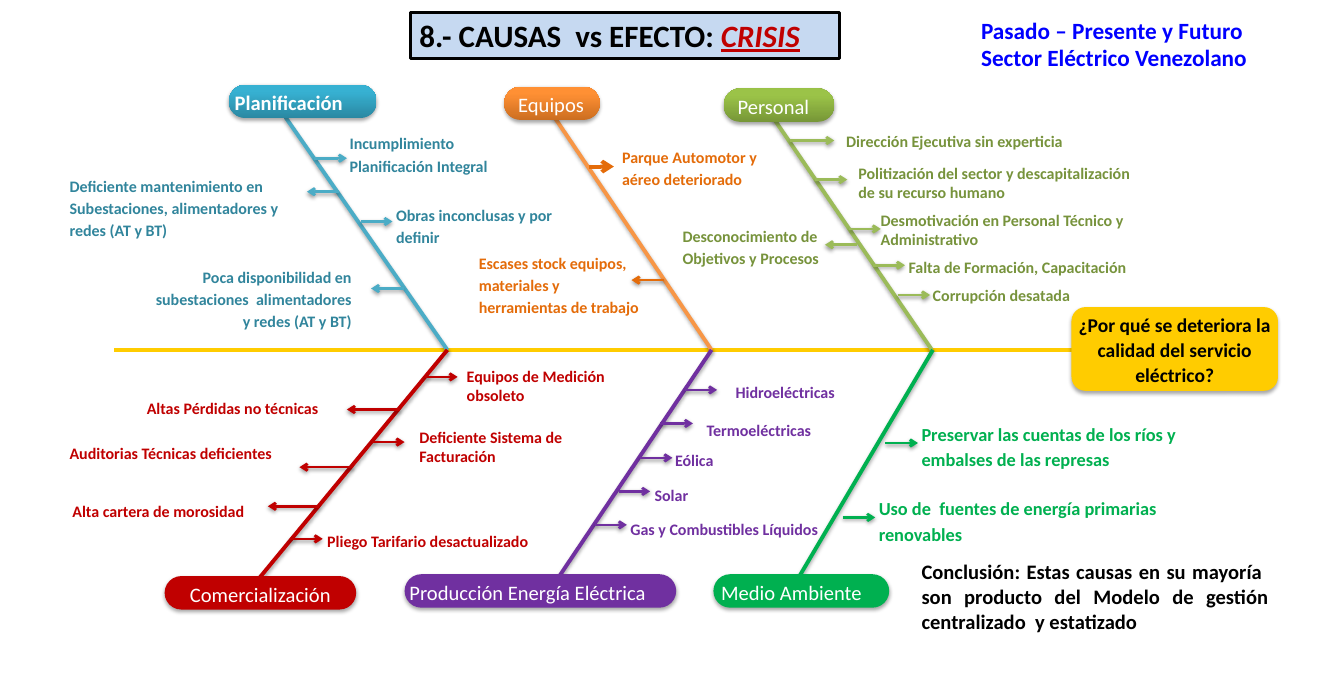
"""Build a fishbone slide on the causes of the electricity service crisis."""
from dataclasses import dataclass

from lxml.etree import SubElement
from pptx import Presentation
from pptx.dml.color import RGBColor
from pptx.enum.shapes import MSO_CONNECTOR as CONN, MSO_SHAPE as SHAPE
from pptx.enum.text import MSO_ANCHOR as ANCHOR, MSO_AUTO_SIZE as AUTO, PP_ALIGN as ALIGN
from pptx.oxml.ns import qn
from pptx.util import Inches, Pt


class Theme:
    font = "Calibri"
    black, white, blue, red = "000000", "FFFFFF", "0000FF", "C00000"
    yellow, pale = "FFCC00", "C6D9F1"
    teal, teal_text, teal_fill = "4BACC6", "31859C", ("2A88A2", "37B1D2")
    orange, orange_text, orange_fill = "F79646", "E46C0A", ("CC6E20", "FF9034")
    olive, olive_text, olive_fill = "9BBB59", "77933C", ("779737", "9BC348")
    purple, green = "7030A0", "00B050"
    title, subtitle, head, effect, large, cause = 24, 18, 15.9, 15.1, 14.2, 12.4


@dataclass
class Cause:
    text: str
    box: tuple
    arrow: tuple
    spacing: float = 1.15
    size: float = Theme.cause
    align: ALIGN = ALIGN.LEFT
    weight: float = 2


@dataclass
class Branch:
    name: str
    pill: tuple
    inset: float
    bone: tuple
    fill: tuple
    bone_color: str
    twig_color: str
    text_color: str
    causes: list
    bold: bool = False
    align: ALIGN = ALIGN.LEFT


T = Theme
SPINE_Y, PILL_H = 3.76, 0.36

branches = [
    Branch("Planificación", (2.46, 0.91, 1.59), 0.01, (3.07, 1.26, 4.81),
           T.teal_fill, T.teal, T.teal, T.teal_text, [
        Cause("Incumplimiento Planificación Integral", (3.66, 1.36, 2.03, 0.57), (3.38, 3.73, 1.7)),
        Cause("Deficiente mantenimiento en Subestaciones, alimentadores y redes (AT y BT)",
              (0.65, 1.82, 2.81, 0.69), (3.65, 3.3, 2.06)),
        Cause("Obras inconclusas y por definir", (4.16, 2.13, 2.29, 0.51), (3.88, 4.22, 2.38)),
        Cause("Poca disponibilidad en\nsubestaciones  alimentadores\ny redes (AT y BT)",
              (1.08, 2.79, 2.8, 0.87), (4.34, 3.99, 3.1), align=ALIGN.RIGHT),
    ], bold=True),
    Branch("Equipos", (5.42, 0.93, 1.03), 0.1, (5.84, 1.08, 7.65),
           T.orange_fill, T.orange, T.orange_text, T.orange_text, [
        Cause("Parque Automotor y aéreo deteriorado", (6.59, 1.5, 1.72, 0.5),
              (6.33, 6.6, 1.79), weight=3),
        Cause("Escases stock equipos, materiales y\nherramientas de trabajo",
              (5.05, 2.64, 2.07, 0.68), (7.14, 6.79, 3.01)),
    ]),
    Branch("Personal", (7.78, 0.95, 1.19), 0.1, (8.2, 1.1, 10.02),
           T.olive_fill, T.olive, T.olive, T.olive_text, [
        Cause("Dirección Ejecutiva sin experticia", (9, 1.33, 2.9, 0.36), (8.49, 8.97, 1.51)),
        Cause("Politización del sector y descapitalización\nde su recurso humano",
              (9.13, 1.71, 3.65, 0.52), (8.76, 9.11, 1.93), 1),
        Cause("Desmotivación en Personal Técnico y Administrativo",
              (9.37, 2.21, 3.29, 0.47), (9.13, 9.47, 2.46), 1),
        Cause("Desconocimiento de\nObjetivos y Procesos", (7.24, 2.35, 1.89, 0.5), (9.21, 8.87, 2.63)),
        Cause("Falta de Formación, Capacitación", (9.67, 2.72, 2.83, 0.22), (9.39, 9.73, 2.85), 1),
        Cause("Corrupción desatada", (9.93, 3.02, 1.75, 0.31), (9.65, 10, 3.17), 1),
    ]),
    Branch("Comercialización", (1.77, 6.19, 2.06), 0, (2.69, 6.33, 4.81),
           (T.red,), T.red, T.red, T.red, [
        Cause("Equipos de Medición obsoleto", (4.92, 3.89, 2.24, 0.34), (4.57, 4.92, 4.05), 1),
        Cause("Altas Pérdidas no técnicas", (1.48, 4.23, 2.24, 0.3), (4.3, 3.73, 4.4), 1),
        Cause("Deficiente Sistema de Facturación", (4.41, 4.54, 1.98, 0.53), (4, 4.35, 4.75), 1),
        Cause("Auditorias Técnicas deficientes", (0.65, 4.72, 2.54, 0.56), (3.8, 3.22, 5.02), 1),
        Cause("Alta cartera de morosidad", (0.68, 5.31, 2.21, 0.55), (3.43, 2.88, 5.44)),
        Cause("Pliego Tarifario desactualizado", (3.42, 5.66, 2.44, 0.27), (3.12, 3.47, 5.79), 1),
    ], align=ALIGN.CENTER),
    Branch("Producción Energía Eléctrica", (4.35, 6.17, 2.92), 0, (5.92, 6.33, 7.65),
           (T.purple,), T.purple, T.purple, T.purple, [
        Cause("Hidroeléctricas", (7.81, 4.03, 1.39, 0.27), (7.36, 7.71, 4.19)),
        Cause("Termoeléctricas", (7.5, 4.44, 1.54, 0.22), (7.1, 7.45, 4.55)),
        Cause("Eólica", (7.16, 4.76, 0.67, 0.34), (6.88, 7.23, 4.92)),
        Cause("Solar", (6.94, 5.14, 0.67, 0.19), (6.65, 6.99, 5.28)),
        Cause("Gas y Combustibles Líquidos", (6.68, 5.5, 2.3, 0.27), (6.4, 6.74, 5.64)),
    ]),
    Branch("Medio Ambiente", (7.67, 6.17, 1.89), 0.03, (8.49, 6.37, 10.03),
           (T.green,), T.green, T.green, T.green, [
        Cause("Preservar las cuentas de los ríos y embalses de las represas",
              (9.81, 4.46, 3.37, 0.6), (9.52, 9.87, 4.76), size=T.large),
        Cause("Uso de  fuentes de energía primarias renovables",
              (9.35, 5.26, 3.37, 0.6), (9.06, 9.41, 5.56), size=T.large),
    ]),
]


def write(tf, text, size, color, spacing=1, align=ALIGN.LEFT, bold=True):
    tf.text = text
    tf.word_wrap = True
    tf.auto_size = AUTO.NONE
    for p in tf.paragraphs:
        p.alignment = align
        p.line_spacing = spacing
        for r in p.runs:
            r.font.name, r.font.size, r.font.bold = T.font, Pt(size), bold
            r.font.color.rgb = RGBColor.from_string(color)


def shadow(sp, alpha, dist):
    effects = SubElement(sp._element.spPr, qn("a:effectLst"))
    if alpha:
        outer = SubElement(effects, qn("a:outerShdw"), blurRad=str(Pt(3.1)),
                           dist=str(Pt(dist)), dir="5400000", rotWithShape="0")
        black = SubElement(outer, qn("a:srgbClr"), val=T.black)
        SubElement(black, qn("a:alpha"), val=str(alpha * 1000))


prs = Presentation()
prs.slide_width, prs.slide_height = Inches(14.45), Inches(7.5)
slide = prs.slides.add_slide(prs.slide_layouts[5])
shapes = slide.shapes

lines = [(1.23, SPINE_Y, 12.17, SPINE_Y, T.yellow, 3, False, 0)]
for b in branches:
    x, y, joint = b.bone
    lines.append((x, y, joint, SPINE_Y, b.bone_color, 3, False, 35))
    for c in b.causes:
        start, end, y = c.arrow
        lines.append((start, y, end, y, b.twig_color, c.weight, True, 38 if c.weight == 2 else 0))

for x1, y1, x2, y2, color, weight, arrow, alpha in lines:
    cx = shapes.add_connector(CONN.STRAIGHT, Inches(x1), Inches(y1), Inches(x2), Inches(y2))
    cx.line.color.rgb = RGBColor.from_string(color)
    cx.line.width = Pt(weight)
    if arrow:
        SubElement(cx.line._get_or_add_ln(), qn("a:tailEnd"), type="arrow")
    shadow(cx, alpha, 1.6 if arrow else 1.8)

for b in branches:
    x, y, w = b.pill
    sp = shapes.add_shape(SHAPE.ROUNDED_RECTANGLE, Inches(x), Inches(y), Inches(w), Inches(PILL_H))
    sp.adjustments[0] = 0.5
    if len(b.fill) == 2:
        sp.fill.gradient()
        sp.fill.gradient_angle = 90
        for stop, color, place in zip(sp.fill.gradient_stops, b.fill, (0, 0.8)):
            stop.color.rgb = RGBColor.from_string(color)
            stop.position = place
    else:
        sp.fill.solid()
        sp.fill.fore_color.rgb = RGBColor.from_string(b.fill[0])
    sp.line.fill.background()
    shadow(sp, 35, 1.8)
    tf = sp.text_frame
    write(tf, b.name, T.head, T.white, align=b.align, bold=b.bold)
    tf.vertical_anchor = ANCHOR.TOP
    tf.margin_left, tf.margin_top = Inches(b.inset), Inches(0.01)
    tf.margin_right = tf.margin_bottom = 0

    for c in b.causes:
        tb = shapes.add_textbox(*map(Inches, c.box))
        write(tb.text_frame, c.text, c.size, b.text_color, c.spacing, c.align)

effect = shapes.add_shape(SHAPE.ROUNDED_RECTANGLE, Inches(11.52), Inches(3.3), Inches(2.22), Inches(0.9))
effect.fill.solid()
effect.fill.fore_color.rgb = RGBColor.from_string(T.yellow)
effect.line.fill.background()
shadow(effect, 35, 1.8)
tf = effect.text_frame
tf.margin_left = tf.margin_right = tf.margin_top = tf.margin_bottom = 0
write(tf, "¿Por qué se deteriora la calidad del servicio eléctrico?", T.effect, T.black, 1.07, ALIGN.CENTER)

tb = shapes.add_textbox(Inches(9.81), Inches(5.96), Inches(3.93), Inches(0.91))
write(tb.text_frame, "Conclusión: Estas causas en su mayoría  son producto del Modelo de gestión "
      "centralizado  y estatizado", T.head, T.black, align=ALIGN.JUSTIFY)
tb = shapes.add_textbox(Inches(10.45), Inches(0.12), Inches(3.1), Inches(0.71))
write(tb.text_frame, "Pasado – Presente y Futuro\nSector Eléctrico Venezolano", T.subtitle, T.blue)

title = shapes.title
title.left, title.top, title.width, title.height = map(Inches, (4.41, 0.13, 4.62, 0.5))
title.fill.solid()
title.fill.fore_color.rgb = RGBColor.from_string(T.pale)
title.line.color.rgb = RGBColor.from_string(T.black)
title.line.width = Pt(2.25)
write(title.text_frame, "8.- CAUSAS  vs EFECTO: ", T.title, T.black)
r = title.text_frame.paragraphs[0].add_run()
r.text = "CRISIS"
r.font.name, r.font.size = T.font, Pt(T.title)
r.font.bold = r.font.italic = r.font.underline = True
r.font.color.rgb = RGBColor.from_string(T.red)

prs.save("out.pptx")
